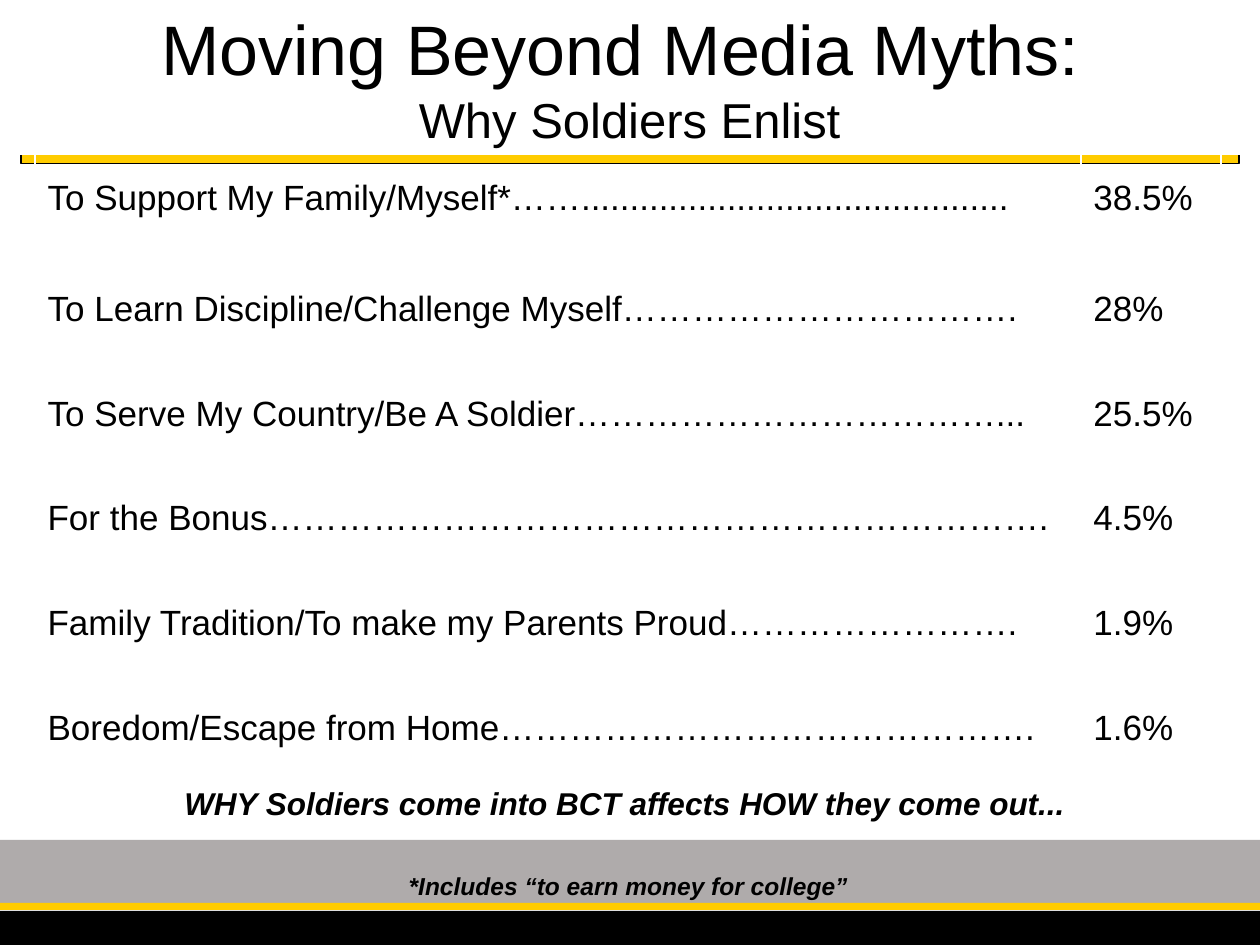
from dataclasses import dataclass

from pptx import Presentation
from pptx.dml.color import RGBColor
from pptx.enum.shapes import MSO_SHAPE
from pptx.enum.text import MSO_ANCHOR, MSO_AUTO_SIZE, PP_ALIGN
from pptx.util import Pt


@dataclass(frozen=True)
class Theme:
    font: str = "Arial"
    black: RGBColor = RGBColor(0x00, 0x00, 0x00)
    white: RGBColor = RGBColor(0xFF, 0xFF, 0xFF)
    gold: RGBColor = RGBColor(0xFF, 0xCC, 0x00)
    gray: RGBColor = RGBColor(0xAF, 0xAB, 0xAB)
    title: int = 40
    subtitle: int = 28
    body: int = 20
    message: int = 18
    footnote: int = 14


THEME = Theme()
TITLE_LINES = [
    ("Moving Beyond Media Myths: ", THEME.title),
    ("Why Soldiers Enlist", THEME.subtitle),
]
REASONS = [
    ("To Support My Family/Myself*……............................................", "38.5%"),
    ("To Learn Discipline/Challenge Myself…………………………….", "28%"),
    ("To Serve My Country/Be A Soldier………………………………...", "25.5%"),
    ("For the Bonus………………………………………………………….", "4.5%"),
    ("Family Tradition/To make my Parents Proud…………………….", "1.9%"),
    ("Boredom/Escape from Home……………………………………….", "1.6%"),
]
MESSAGE = "WHY Soldiers come into BCT affects HOW they come out... "
FOOTNOTE = "*Includes “to earn money for college”"

PAGE_WIDTH, PAGE_HEIGHT = 720, 540
BARS = [
    (0, 480, PAGE_WIDTH, 36, THEME.gray, False),
    (0, 516, PAGE_WIDTH, 4, THEME.gold, False),
    (0, 520.5, PAGE_WIDTH, 19.5, THEME.black, False),
    (12, 88, 696, 5.5, THEME.gold, True),
]
TITLE_AREA = (-0.5, -1.5, 720.5, 90)
TABLE_LEFT, TABLE_TOP = 20, 80.5
COLUMN_WIDTHS = (597.6, 80)
FIRST_ROW_HEIGHT, ROW_HEIGHT = 66, 60
MESSAGE_AREA = (24, 444.5, 671, 29)
FOOTNOTE_AREA = (226.5, 494, 266.5, 24)


def points(values):
    return [Pt(value) for value in values]


def style(paragraph, size, emphasis=False, align=PP_ALIGN.LEFT):
    paragraph.alignment = align
    paragraph.space_before = Pt(0)
    paragraph.line_spacing = 1.0
    font = paragraph.font
    font.name, font.size = THEME.font, Pt(size)
    font.color.rgb = THEME.black
    font.bold = font.italic = emphasis


def add_bar(page, left, top, width, height, color, outlined):
    bar = page.shapes.add_shape(MSO_SHAPE.RECTANGLE, *points((left, top, width, height)))
    bar.shadow.inherit = False
    bar.fill.solid()
    bar.fill.fore_color.rgb = color
    if outlined:
        bar.line.color.rgb = THEME.black
        bar.line.width = Pt(1)
    else:
        bar.line.fill.background()


def add_reasons(page):
    height = FIRST_ROW_HEIGHT + ROW_HEIGHT * (len(REASONS) - 1)
    area = points((TABLE_LEFT, TABLE_TOP, sum(COLUMN_WIDTHS), height))
    table = page.shapes.add_table(len(REASONS), len(COLUMN_WIDTHS), *area).table
    table.first_row = table.horz_banding = False
    for column, width in zip(table.columns, COLUMN_WIDTHS):
        column.width = Pt(width)
    for index, (row, values) in enumerate(zip(table.rows, REASONS)):
        row.height = Pt(ROW_HEIGHT if index else FIRST_ROW_HEIGHT)
        for cell, value in zip(row.cells, values):
            cell.text = value
            cell.fill.background()
            cell.vertical_anchor = MSO_ANCHOR.MIDDLE
            style(cell.text_frame.paragraphs[0], THEME.body)


def place_title(page):
    title = page.shapes.title
    title.left, title.top, title.width, title.height = points(TITLE_AREA)
    title.fill.solid()
    title.fill.fore_color.rgb = THEME.white
    frame = title.text_frame
    frame.auto_size = MSO_AUTO_SIZE.NONE
    frame.vertical_anchor = MSO_ANCHOR.BOTTOM
    frame.text = "\n".join(text for text, size in TITLE_LINES)
    for paragraph, (text, size) in zip(frame.paragraphs, TITLE_LINES):
        style(paragraph, size, align=PP_ALIGN.CENTER)
    page.shapes._spTree.append(title._element)


def add_note(page, text, area, size, align, wrap):
    box = page.shapes.add_textbox(*points(area))
    box.text_frame.word_wrap = wrap
    box.text_frame.text = text
    style(box.text_frame.paragraphs[0], size, emphasis=True, align=align)


def main():
    deck = Presentation()
    deck.slide_width, deck.slide_height = points((PAGE_WIDTH, PAGE_HEIGHT))
    page = deck.slides.add_slide(deck.slide_layouts[5])
    for bar in BARS:
        add_bar(page, *bar)
    add_reasons(page)
    place_title(page)
    add_note(page, FOOTNOTE, FOOTNOTE_AREA, THEME.footnote, PP_ALIGN.LEFT, False)
    add_note(page, MESSAGE, MESSAGE_AREA, THEME.message, PP_ALIGN.CENTER, True)
    deck.save("out.pptx")


if __name__ == "__main__":
    main()
